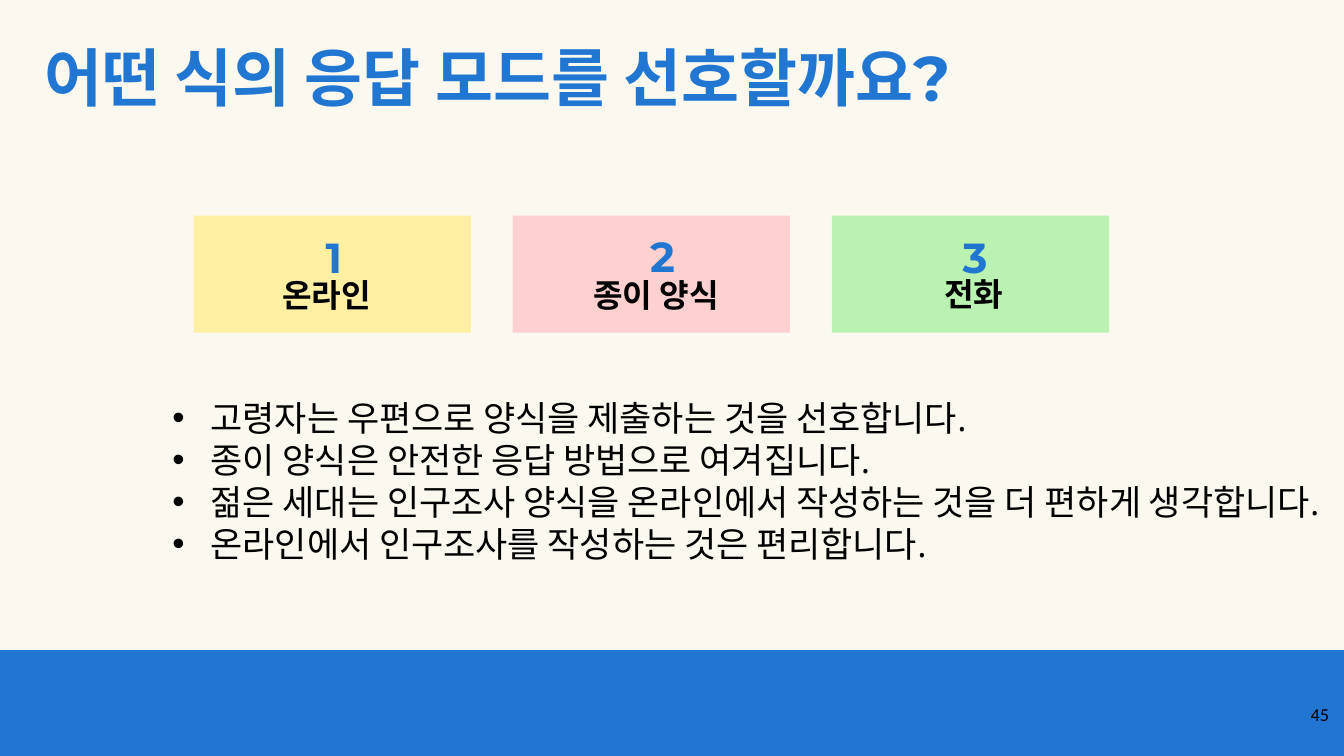
from lxml.etree import SubElement
from pptx import Presentation
from pptx.dml.color import RGBColor
from pptx.enum.shapes import MSO_SHAPE as Preset
from pptx.enum.text import MSO_ANCHOR as Anchor, MSO_AUTO_SIZE as AutoSize, PP_ALIGN as Align
from pptx.oxml.ns import qn
from pptx.util import Inches, Pt

CREAM = RGBColor(0xFB, 0xF9, 0xEF)
BLUE = RGBColor(0x21, 0x76, 0xD2)
YELLOW = RGBColor(0xFF, 0xEF, 0xA2)
PINK = RGBColor(0xFE, 0xD0, 0xD0)
GREEN = RGBColor(0xB9, 0xF2, 0xB1)
BLACK = RGBColor(0, 0, 0)

CARD_LEFT, CARD_TOP, CARD_STEP = 1.92, 2.14, 3.165

MODES = [
    ("온라인", YELLOW, (1.46, 2.68), (3.13, 2.25)),
    ("종이 양식", PINK, (4.73, 2.68), (6.35, 2.24)),
    ("전화", GREEN, (7.88, 2.67), (9.45, 2.25)),
]
REASONS = [
    "고령자는 우편으로 양식을 제출하는 것을 선호합니다.",
    "종이 양식은 안전한 응답 방법으로 여겨집니다.",
    "젊은 세대는 인구조사 양식을 온라인에서 작성하는 것을 더 편하게 생각합니다.",
    "온라인에서 인구조사를 작성하는 것은 편리합니다.",
]


def add_bullet(paragraph, indent=0.38):
    properties = paragraph._p.get_or_add_pPr()
    properties.set("marL", str(Inches(indent)))
    properties.set("indent", str(Inches(-indent)))
    SubElement(properties, qn("a:buFont"), typeface="Arial")
    SubElement(properties, qn("a:buChar"), char="•")


def write(holder, *lines, font, size, color=BLACK, bold=False, align=Align.LEFT, bullets=False):
    frame = holder.text_frame
    frame.word_wrap = True
    frame.auto_size = AutoSize.NONE
    frame.vertical_anchor = Anchor.TOP
    for index, line in enumerate(lines):
        paragraph = frame.add_paragraph() if index else frame.paragraphs[0]
        paragraph.alignment = align
        paragraph.space_before = Pt(0)
        if bullets:
            add_bullet(paragraph)
        run = paragraph.add_run()
        run.text = line
        run.font.name = font
        run.font.size = Pt(size)
        run.font.bold = bold
        run.font.color.rgb = color


def place(holder, left, top, width, height):
    holder.left, holder.top = Inches(left), Inches(top)
    holder.width, holder.height = Inches(width), Inches(height)


def add_block(slide, left, top, width, height, color):
    block = slide.shapes.add_shape(
        Preset.RECTANGLE, Inches(left), Inches(top), Inches(width), Inches(height))
    block.shadow.inherit = False
    block.fill.solid()
    block.fill.fore_color.rgb = color
    block.line.fill.background()


def add_label(slide, text, left, top, width, height, **style):
    label = slide.shapes.add_textbox(Inches(left), Inches(top), Inches(width), Inches(height))
    write(label, text, **style)


def main():
    deck = Presentation()
    deck.slide_width, deck.slide_height = Inches(13.33), Inches(7.5)
    slide = deck.slides.add_slide(deck.slide_layouts[1])
    slide.background.fill.solid()
    slide.background.fill.fore_color.rgb = CREAM

    title, reasons = slide.placeholders
    place(title, 0.34, 0.33, 12.53, 1)
    write(title, "어떤 식의 응답 모드를 선호할까요?", font="Montserrat", size=45, color=BLUE, bold=True)
    place(reasons, 1.61, 3.88, 11.63, 2.5)
    write(reasons, *REASONS, font="Open Sans", size=25, bullets=True)

    add_block(slide, 0, 6.45, 13.33, 1.05, BLUE)
    for index, (mode, color, mode_at, number_at) in enumerate(MODES):
        add_block(slide, CARD_LEFT + index * CARD_STEP, CARD_TOP, 2.75, 1.16, color)
        add_label(slide, mode, *mode_at, 3.56, 0.64,
                  font="Open Sans", size=23, bold=True, align=Align.CENTER)
        add_label(slide, str(index + 1), *number_at, 0.52, 0.61,
                  font="Montserrat", size=30, color=BLUE, bold=True)
    add_label(slide, "45", 12.48, 6.93, 0.8, 0.57, font="Calibri", size=13, align=Align.RIGHT)

    deck.save("out.pptx")


if __name__ == "__main__":
    main()
